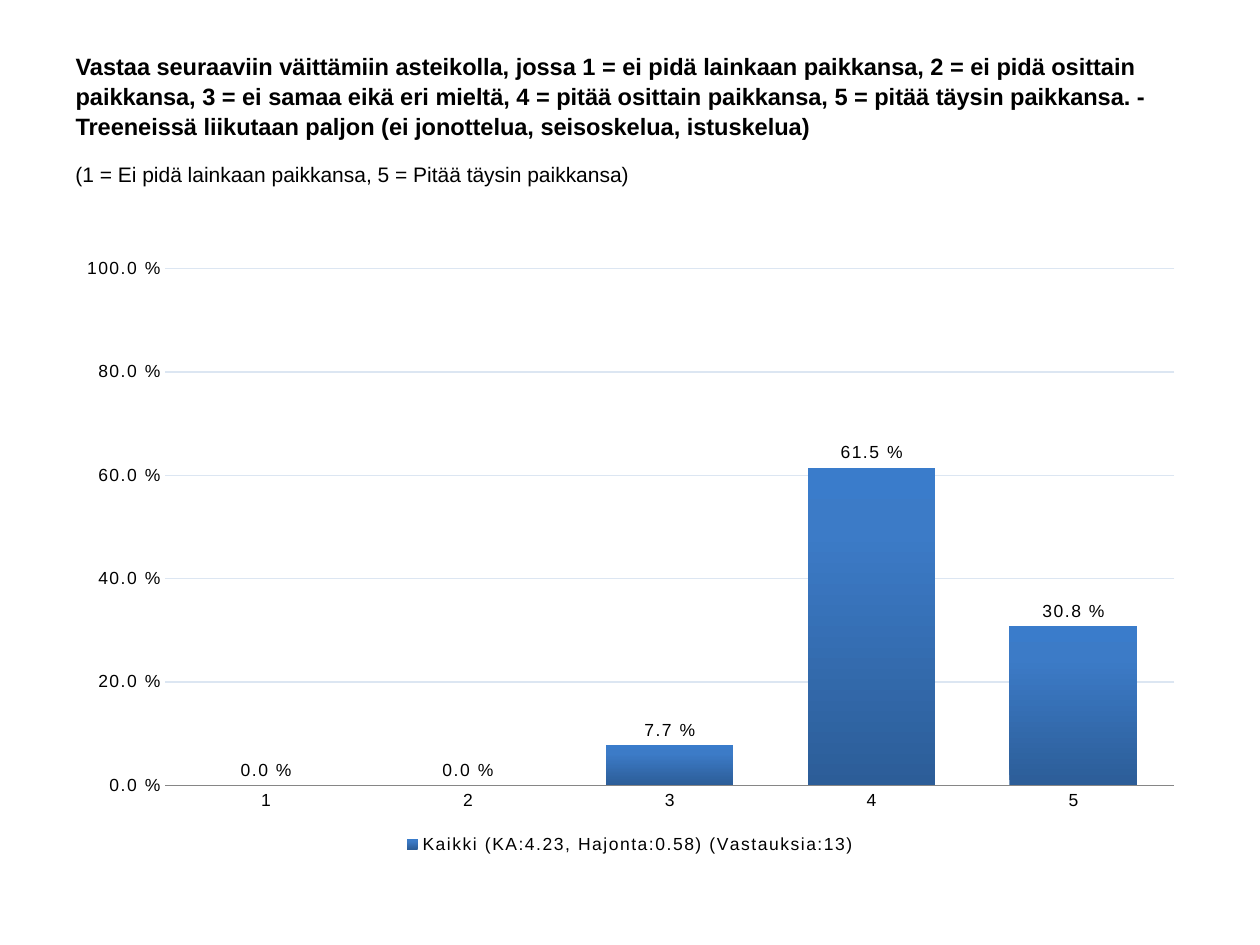
"""Build a survey result slide with a column chart of answer shares."""
from copy import deepcopy

from lxml.etree import SubElement
from pptx import Presentation
from pptx.chart.data import CategoryChartData
from pptx.dml.color import RGBColor
from pptx.enum.chart import XL_CHART_TYPE as ChartType
from pptx.enum.chart import XL_LABEL_POSITION as LabelPosition
from pptx.enum.chart import XL_LEGEND_POSITION as LegendPosition
from pptx.enum.chart import XL_TICK_MARK as TickMark
from pptx.enum.text import MSO_ANCHOR as Anchor
from pptx.enum.text import PP_ALIGN as Align
from pptx.oxml.ns import qn
from pptx.util import Pt

BLACK = RGBColor(0x00, 0x00, 0x00)
GRID = RGBColor(0xDC, 0xE6, 0xF2)
AXIS = RGBColor(0x86, 0x86, 0x86)
BAR_STOPS = [
    (0, RGBColor(0x2C, 0x5D, 0x98)),
    (0.8, RGBColor(0x3C, 0x7B, 0xC7)),
    (1, RGBColor(0x3A, 0x7C, 0xCB)),
]
PERCENT = r"0.0\ %"
LEFT, WIDTH = Pt(36), Pt(648)
TITLE = (
    "Vastaa seuraaviin väittämiin asteikolla, jossa 1 = ei pidä lainkaan paikkansa, "
    "2 = ei pidä osittain paikkansa, 3 = ei samaa eikä eri mieltä, 4 = pitää osittain "
    "paikkansa, 5 = pitää täysin paikkansa. - Treeneissä liikutaan paljon "
    "(ei jonottelua, seisoskelua, istuskelua)"
)
SCALE = "(1 = Ei pidä lainkaan paikkansa, 5 = Pitää täysin paikkansa)"
SERIES = "Kaikki (KA:4.23, Hajonta:0.58) (Vastauksia:13)"
SHARES = [0, 0, 0.077, 0.615, 0.308]


def style_font(font, size, bold=False):
    """Set a black Arial font."""
    font.name, font.size, font.bold = "Arial", Pt(size), bold
    font.color.rgb = BLACK


def write_text(box, text, top, height, size, bold=False, anchor=Anchor.TOP):
    """Place a box across the page and fill it with one paragraph."""
    box.left, box.top, box.width, box.height = LEFT, Pt(top), WIDTH, Pt(height)
    frame = box.text_frame
    frame.word_wrap = True
    frame.vertical_anchor = anchor
    para = frame.paragraphs[0]
    para.text = text
    para.alignment = Align.LEFT
    style_font(para.font, size, bold)
    return para


def set_plot_layout(chart, **fractions):
    """Fix the inner plot area as fractions of the chart."""
    plot_area = chart._chartSpace.chart.plotArea
    layout = plot_area.find(qn("c:layout"))
    if layout is None:
        layout = SubElement(plot_area, qn("c:layout"))
        plot_area.insert(0, layout)
    manual = SubElement(layout, qn("c:manualLayout"))
    settings = {"layoutTarget": "inner", "xMode": "edge", "yMode": "edge", **fractions}
    for name, value in settings.items():
        SubElement(manual, qn(f"c:{name}")).set("val", str(value))


def fill_gradient(series):
    """Give the bars a vertical three-stop gradient."""
    fill = series.format.fill
    fill.gradient()
    fill.gradient_angle = 90
    stops = series._element.find(".//" + qn("a:gsLst"))
    stops.insert(1, deepcopy(stops[0]))
    for stop, (position, color) in zip(fill.gradient_stops, BAR_STOPS):
        stop.position = position
        stop.color.rgb = color


def style_axes(chart):
    """Format both axes and the gridlines."""
    for axis in (chart.category_axis, chart.value_axis):
        axis.major_tick_mark = axis.minor_tick_mark = TickMark.NONE
        style_font(axis.tick_labels.font, 10)
    line = chart.category_axis.format.line
    line.color.rgb, line.width = AXIS, Pt(0.75)
    value_axis = chart.value_axis
    value_axis.minimum_scale, value_axis.maximum_scale = 0, 1
    value_axis.major_unit = 0.2
    value_axis.format.line.fill.background()
    value_axis.tick_labels.number_format = PERCENT
    value_axis.tick_labels.number_format_is_linked = False
    grid = value_axis.major_gridlines.format.line
    grid.color.rgb, grid.width = GRID, Pt(0.75)


def add_share_chart(page):
    """Add the column chart of answer shares."""
    chart_data = CategoryChartData(number_format=PERCENT)
    chart_data.categories = ["1", "2", "3", "4", "5"]
    chart_data.add_series(SERIES, SHARES)
    chart = page.shapes.add_chart(
        ChartType.COLUMN_CLUSTERED, LEFT, Pt(139.5), WIDTH, Pt(351.5), chart_data
    ).chart
    chart.has_title = False
    style_font(chart.font, 10)
    chart.has_legend = True
    chart.legend.position = LegendPosition.BOTTOM
    chart.legend.include_in_layout = False
    style_font(chart.legend.font, 10)
    style_axes(chart)
    plot = chart.plots[0]
    plot.gap_width = 58
    plot.vary_by_categories = False
    fill_gradient(plot.series[0])
    labels = plot.series[0].data_labels
    labels.show_value = True
    labels.position = LabelPosition.OUTSIDE_END
    labels.number_format, labels.number_format_is_linked = PERCENT, False
    style_font(labels.font, 10)
    set_plot_layout(chart, x=0.09, y=0.04, w=0.89, h=0.84)
    for properties in chart._chartSpace.iter(qn("a:defRPr")):
        properties.set("spc", "100")


def main():
    """Build and save the deck."""
    deck = Presentation()
    deck.slide_width, deck.slide_height = Pt(720), Pt(540)
    page = deck.slides.add_slide(deck.slide_layouts[5])
    title = write_text(page.shapes.title, TITLE, 26, 57, 13.5, True, Anchor.MIDDLE)
    title.line_spacing = 1.05
    scale_box = page.shapes.add_textbox(LEFT, 0, WIDTH, 0)
    write_text(scale_box, SCALE, 88.5, 42.5, 12)
    add_share_chart(page)
    deck.save("out.pptx")


if __name__ == "__main__":
    main()
